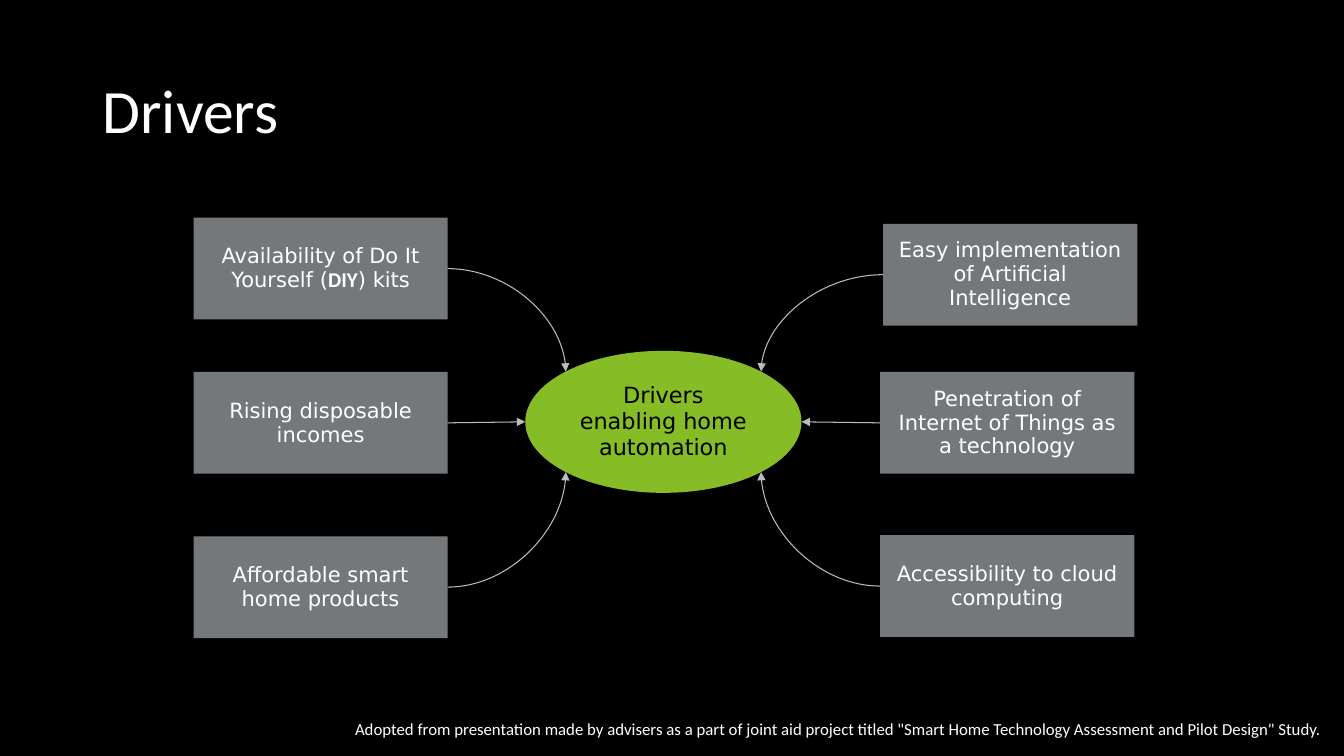
from dataclasses import dataclass
from math import sqrt

from lxml.etree import SubElement
from pptx import Presentation
from pptx.dml.color import RGBColor
from pptx.enum.shapes import MSO_CONNECTOR, MSO_SHAPE
from pptx.enum.text import MSO_ANCHOR, PP_ALIGN
from pptx.oxml.ns import qn
from pptx.util import Inches, Pt

TITLE = "Drivers"
HUB_TEXT = "Drivers enabling home automation"
CREDIT = ("Adopted from presentation made by advisers as a part of joint aid project titled "
          "\"Smart Home Technology Assessment and Pilot Design\" Study.")

# Each driver: column side, row (-1 above the hub, 0 level, 1 below), left, top, text runs.
# A run is (text, emphasised).
DRIVERS = [
    ("left", -1, 1.92, 2.16,
     [("Availability of Do It Yourself (", False), ("DIY", True), (") kits", False)]),
    ("left", 0, 1.92, 3.69, [("Rising disposable incomes", False)]),
    ("left", 1, 1.92, 5.32, [("Affordable smart home products", False)]),
    ("right", -1, 8.76, 2.22, [("Easy implementation of Artificial Intelligence", False)]),
    ("right", 0, 8.73, 3.69, [("Penetration of Internet of Things as a technology", False)]),
    ("right", 1, 8.73, 5.31, [("Accessibility to cloud computing", False)]),
]

SLIDE_SIZE = (13.33, 7.5)
BOX_SIZE = (2.52, 1.01)
HUB_AREA = (5.21, 3.48, 2.74, 1.41)
TITLE_AREA = (0.92, 0.4, 11.5, 1.45)
CREDIT_AREA = (-0.05, 7.13, 13.26, 0.21)

# Direction from the hub centre, rectangle site and ellipse sites by row for each side.
SIDES = {
    "left": {"direction": -1, "box_site": 3, "hub_sites": {-1: 1, 0: 2, 1: 3}},
    "right": {"direction": 1, "box_site": 1, "hub_sites": {-1: 7, 0: 6, 1: 5}},
}


@dataclass(frozen=True)
class Theme:
    background: RGBColor = RGBColor(0x00, 0x00, 0x00)
    light_text: RGBColor = RGBColor(0xFF, 0xFF, 0xFF)
    dark_text: RGBColor = RGBColor(0x00, 0x00, 0x00)
    box: RGBColor = RGBColor(0x75, 0x78, 0x7B)
    hub: RGBColor = RGBColor(0x86, 0xBC, 0x25)
    arrow: RGBColor = RGBColor(0xBB, 0xBC, 0xBC)
    heading_font: str = "Calibri"
    diagram_font: str = "DejaVu Sans"
    title_size: int = 44
    hub_size: int = 16
    box_size: int = 15
    credit_size: int = 12
    arrow_width: float = 0.75


THEME = Theme()


def set_attributes(target, values):
    for name, value in values.items():
        setattr(target, name, value)


def write_text(shape, runs, font, size, color, alignment, line_spacing, vertical_inset):
    frame = shape.text_frame
    set_attributes(frame, {
        "word_wrap": True, "vertical_anchor": MSO_ANCHOR.MIDDLE,
        "margin_left": Inches(0.1), "margin_right": Inches(0.1),
        "margin_top": Inches(vertical_inset), "margin_bottom": Inches(vertical_inset),
    })
    paragraph = frame.paragraphs[0]
    set_attributes(paragraph, {"alignment": alignment, "line_spacing": line_spacing})
    for text, emphasised in runs:
        run = paragraph.add_run()
        run.text = text
        set_attributes(run.font, {
            "name": THEME.heading_font if emphasised else font,
            "size": Pt(size), "bold": emphasised,
        })
        run.font.color.rgb = color


def add_label(slide, area, text, size, alignment, line_spacing):
    label = slide.shapes.add_textbox(*map(Inches, area))
    write_text(label, [(text, False)], THEME.heading_font, size, THEME.light_text,
               alignment, line_spacing, 0.05)


def add_node(slide, preset, area, fill, runs, size, color):
    node = slide.shapes.add_shape(preset, *map(Inches, area))
    node.shadow.inherit = False
    node.fill.solid()
    node.fill.fore_color.rgb = fill
    node.line.fill.background()
    write_text(node, runs, THEME.diagram_font, size, color, PP_ALIGN.CENTER, 0.95, 0.1)
    return node


def hub_point(direction, row):
    """Return the ellipse site: side middle for row 0, otherwise on the diagonal."""
    left, top, width, height = HUB_AREA
    reach = 1 / sqrt(2) if row else 1
    return (Inches(left + width / 2 * (1 + direction * reach)),
            Inches(top + height / 2 * (1 + row * reach)))


def add_arrow(slide, box, hub, side, row):
    end_x, end_y = hub_point(side["direction"], row)
    kind = MSO_CONNECTOR.CURVE if row else MSO_CONNECTOR.STRAIGHT
    arrow = slide.shapes.add_connector(kind, 0, 0, end_x, end_y)
    arrow.begin_connect(box, side["box_site"])
    arrow.end_connect(hub, 0)
    # The ellipse has eight sites, so the site number and end point are set here.
    next(arrow.element.iter(qn("a:endCxn"))).set("idx", str(side["hub_sites"][row]))
    set_attributes(arrow, {"end_x": end_x, "end_y": end_y})
    if row:
        next(arrow.element.iter(qn("a:prstGeom"))).set("prst", "curvedConnector2")
    arrow.line.color.rgb = THEME.arrow
    arrow.line.width = Pt(THEME.arrow_width)
    SubElement(arrow.line._get_or_add_ln(), qn("a:tailEnd"), type="triangle")
    SubElement(arrow.element.spPr, qn("a:effectLst"))


def main():
    presentation = Presentation()
    width, height = map(Inches, SLIDE_SIZE)
    set_attributes(presentation, {"slide_width": width, "slide_height": height})
    slide = presentation.slides.add_slide(presentation.slide_layouts[6])
    slide.background.fill.solid()
    slide.background.fill.fore_color.rgb = THEME.background

    add_label(slide, TITLE_AREA, TITLE, THEME.title_size, PP_ALIGN.LEFT, 0.9)
    add_label(slide, CREDIT_AREA, CREDIT, THEME.credit_size, PP_ALIGN.RIGHT, 1.0)
    hub = add_node(slide, MSO_SHAPE.OVAL, HUB_AREA, THEME.hub, [(HUB_TEXT, False)],
                   THEME.hub_size, THEME.dark_text)
    for side_name, row, left, top, runs in DRIVERS:
        box = add_node(slide, MSO_SHAPE.RECTANGLE, (left, top, *BOX_SIZE), THEME.box,
                       runs, THEME.box_size, THEME.light_text)
        add_arrow(slide, box, hub, SIDES[side_name], row)
    presentation.save("out.pptx")


if __name__ == "__main__":
    main()
